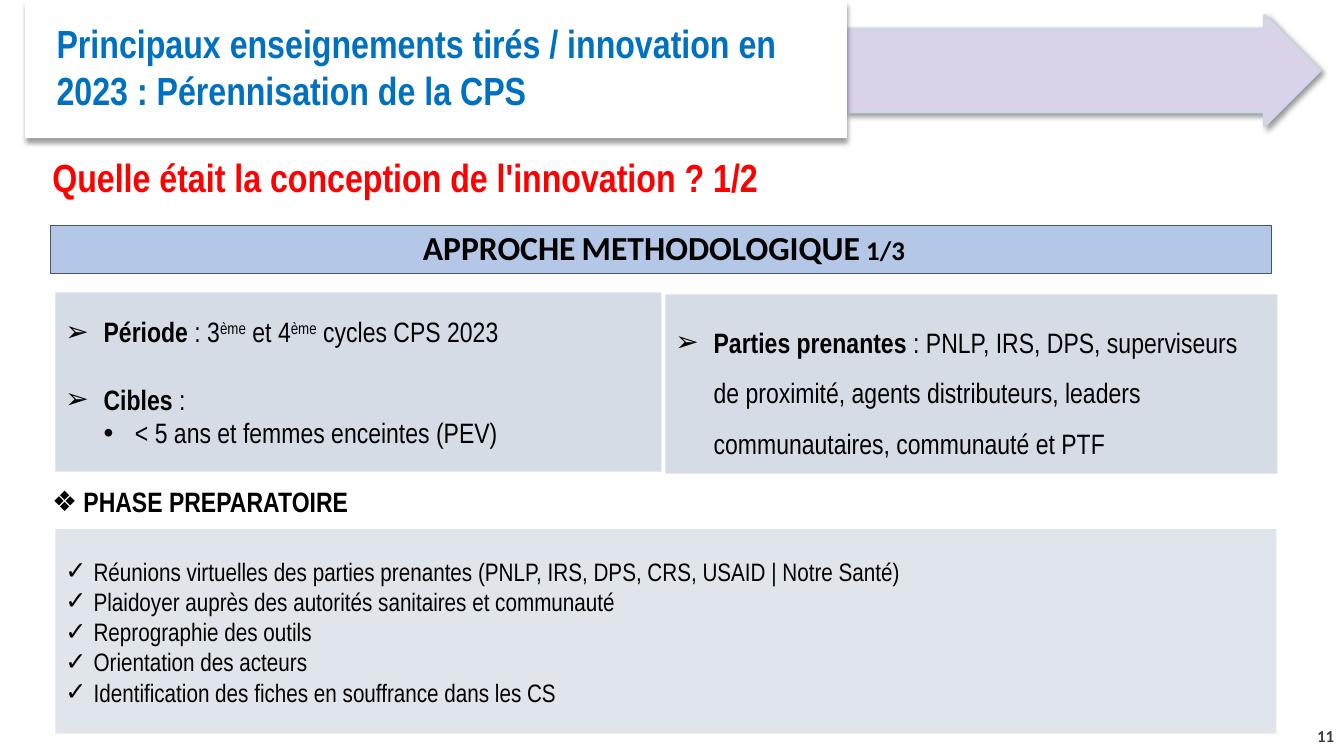
from dataclasses import dataclass

from lxml.etree import SubElement
from pptx import Presentation
from pptx.dml.color import RGBColor
from pptx.enum.shapes import MSO_SHAPE
from pptx.enum.text import MSO_ANCHOR, MSO_AUTO_SIZE, PP_ALIGN
from pptx.oxml.ns import qn
from pptx.util import Inches, Pt


@dataclass(frozen=True)
class Theme:
    """Colours, fonts and type sizes of the slide."""
    black: str = "000000"
    white: str = "FFFFFF"
    blue: str = "0070C0"
    red: str = "FF0000"
    grey: str = "404040"
    lilac: str = "D9D2E9"
    arrow_edge: str = "CFD7E7"
    panel: str = "D6DCE5"
    band: str = "B4C7E7"
    band_edge: str = "44546A"
    narrow: str = "Arial Narrow"
    plain: str = "Calibri"
    heading: int = 28
    band_size: int = 24
    body: int = 20
    small: int = 18
    number: int = 12


THEME = Theme()
SUPERSCRIPT = "superscript"
BOLD = "bold"
NORMAL = "normal"


def style_run(run, size, color=THEME.black, bold=False, face=THEME.narrow):
    """Set the font of one run."""
    run.font.size = Pt(size)
    run.font.name = face
    run.font.bold = bold
    run.font.color.rgb = RGBColor.from_string(color)


def add_panel(slide, box, kind=MSO_SHAPE.RECTANGLE, fill=None, edge=None, edge_width=0, alpha=None):
    """Add a flat shape with optional fill, outline and opacity."""
    panel = slide.shapes.add_shape(kind, *map(Inches, box))
    panel.shadow.inherit = False
    if fill:
        panel.fill.solid()
        panel.fill.fore_color.rgb = RGBColor.from_string(fill)
    else:
        panel.fill.background()
    if edge:
        panel.line.color.rgb = RGBColor.from_string(edge)
        panel.line.width = Pt(edge_width)
    else:
        panel.line.fill.background()
    if alpha:
        tint = panel.fill._xPr.find(".//" + qn("a:srgbClr"))
        SubElement(tint, qn("a:alpha"), val=str(alpha * 1000))
    return panel


def cast_shadow(panel, angle):
    """Give a shape a soft black shadow falling at an angle in degrees."""
    effects = panel._element.spPr.find(qn("a:effectLst"))
    shadow = SubElement(effects, qn("a:outerShdw"), blurRad=str(Pt(4)), dist=str(Pt(3)),
                        dir=str(angle * 60000), rotWithShape="0")
    tint = SubElement(shadow, qn("a:srgbClr"), val=THEME.black)
    SubElement(tint, qn("a:alpha"), val="40000")


def prepare_frame(holder, inset=0.1, anchor=MSO_ANCHOR.MIDDLE):
    """Wrap the text of a shape and set its anchor and vertical insets."""
    frame = holder.text_frame
    frame.word_wrap = True
    frame.auto_size = MSO_AUTO_SIZE.NONE
    frame.vertical_anchor = anchor
    frame.margin_left = frame.margin_right = Inches(0.1)
    frame.margin_top = frame.margin_bottom = Inches(inset)
    return frame


def add_label(slide, box, text, size, color, face=THEME.narrow, anchor=MSO_ANCHOR.MIDDLE, align=PP_ALIGN.LEFT):
    """Add a bold one-paragraph text box."""
    frame = prepare_frame(slide.shapes.add_textbox(*map(Inches, box)), 0.05, anchor)
    frame.text = text
    frame.paragraphs[0].alignment = align
    style_run(frame.paragraphs[0].runs[0], size, color, True, face)


def set_bullet(paragraph, mark, left, hanging):
    """Give a paragraph a black bullet and a hanging indent in inches."""
    properties = paragraph._p.get_or_add_pPr()
    properties.set("marL", str(Inches(left)))
    properties.set("indent", str(-Inches(hanging)))
    tint = SubElement(properties, qn("a:buClr"))
    SubElement(tint, qn("a:srgbClr"), val=THEME.black)
    SubElement(properties, qn("a:buFont"), typeface="Arial")
    SubElement(properties, qn("a:buChar"), char=mark)


def fill_list(holder, items, mark, indent, size):
    """Write bulleted items, each a list of (text, style) pieces."""
    frame = prepare_frame(holder)
    for index, pieces in enumerate(items):
        paragraph = frame.add_paragraph() if index else frame.paragraphs[0]
        paragraph.alignment = PP_ALIGN.LEFT
        set_bullet(paragraph, mark, indent, indent)
        for text, style in pieces:
            run = paragraph.add_run()
            run.text = text
            style_run(run, size, bold=style == BOLD)
            if style == SUPERSCRIPT:
                run._r.get_or_add_rPr().set("baseline", "30000")
    return frame


def add_header(slide, left, top):
    """Draw the arrow banner and the heading card."""
    arrow = add_panel(slide, (left + 8.15, top + 0.13, 4.69, 1.1), MSO_SHAPE.RIGHT_ARROW,
                      THEME.lilac, THEME.arrow_edge, 2)
    arrow.adjustments[0] = 0.75
    cast_shadow(arrow, 45)
    card = add_panel(slide, (left, top, 8.15, 1.35), fill=THEME.white)
    cast_shadow(card, 90)
    heading = add_panel(slide, (left + 0.17, top + 0.2, 7.9, 0.88), MSO_SHAPE.ROUNDED_RECTANGLE)
    frame = prepare_frame(heading)
    frame.text = "Principaux enseignements tirés / innovation en 2023 : Pérennisation de la CPS"
    frame.paragraphs[0].alignment = PP_ALIGN.LEFT
    style_run(frame.paragraphs[0].runs[0], THEME.heading, THEME.blue, True)


def format_title(slide, box):
    """Turn the title placeholder into the blue section band."""
    title = slide.shapes.title
    title.left, title.top, title.width, title.height = map(Inches, box)
    title.fill.solid()
    title.fill.fore_color.rgb = RGBColor.from_string(THEME.band)
    title.line.color.rgb = RGBColor.from_string(THEME.band_edge)
    title.line.width = Pt(0.75)
    frame = prepare_frame(title, 0.05)
    frame.text = " APPROCHE METHODOLOGIQUE 1/3"
    paragraph = frame.paragraphs[0]
    paragraph.alignment = PP_ALIGN.CENTER
    paragraph.line_spacing = 0.9
    style_run(paragraph.runs[0], THEME.band_size, bold=True, face=THEME.plain)
    paragraph.runs[0]._r.get_or_add_rPr().set("cap", "small")


def add_scope(slide, left, top):
    """Place the period and targets beside the stakeholders."""
    period = add_panel(slide, (left, top, 6.01, 1.78), fill=THEME.panel)
    frame = fill_list(period, [
        [("Période", BOLD), (" : 3", NORMAL), ("ème", SUPERSCRIPT), (" et 4", NORMAL),
         ("ème", SUPERSCRIPT), (" cycles CPS 2023", NORMAL)],
        [("Cibles", BOLD), (" :", NORMAL)],
    ], "➢", 0.38, THEME.body)
    frame.paragraphs[1].space_before = Pt(24)
    target = frame.add_paragraph()
    target.text = "< 5 ans et femmes enceintes (PEV)"
    target.level = 1
    target.alignment = PP_ALIGN.LEFT
    set_bullet(target, "•", 0.69, 0.31)
    style_run(target.runs[0], THEME.body)

    stakeholders = add_panel(slide, (left + 6.05, top + 0.02, 6.07, 1.78), fill=THEME.panel)
    frame = fill_list(stakeholders, [
        [("Parties prenantes ", BOLD),
         (": PNLP, IRS, DPS, superviseurs de proximité, agents distributeurs, leaders "
          "communautaires, communauté et PTF", NORMAL)],
    ], "➢", 0.38, THEME.body)
    frame.paragraphs[0].line_spacing = 1.5


def add_preparation(slide, left, top):
    """Place the preparatory phase heading above its list of steps."""
    heading = slide.shapes.add_textbox(*map(Inches, (left - 0.13, top, 12.13, 0.39)))
    fill_list(heading, [[("PHASE PREPARATOIRE", BOLD)]], "❖", 0.31, THEME.body)
    steps = ["Réunions virtuelles des parties prenantes (PNLP, IRS, DPS, CRS, USAID | Notre Santé)",
             "Plaidoyer auprès des autorités sanitaires et communauté",
             "Reprographie des outils",
             "Orientation des acteurs",
             "Identification des fiches en souffrance dans les CS"]
    panel = add_panel(slide, (left, top + 0.47, 12.11, 2.03), fill=THEME.panel, alpha=75)
    fill_list(panel, [[(step, NORMAL)] for step in steps], "✓", 0.28, THEME.small)


def main():
    """Build the slide and save it."""
    deck = Presentation()
    deck.slide_width, deck.slide_height = Inches(13.33), Inches(7.5)
    slide = deck.slides.add_slide(deck.slide_layouts[5])
    add_header(slide, 0.25, 0.02)
    add_label(slide, (0.42, 1.47, 9.79, 0.57), "Quelle était la conception de l'innovation ? 1/2",
              THEME.heading, THEME.red, anchor=MSO_ANCHOR.TOP)
    format_title(slide, (0.5, 2.24, 12.11, 0.47))
    add_scope(slide, 0.55, 2.9)
    add_preparation(slide, 0.55, 4.78)
    add_label(slide, (12.78, 7.1, 0.55, 0.4), "11", THEME.number, THEME.grey, THEME.plain, align=PP_ALIGN.RIGHT)
    deck.save("out.pptx")


if __name__ == "__main__":
    main()
